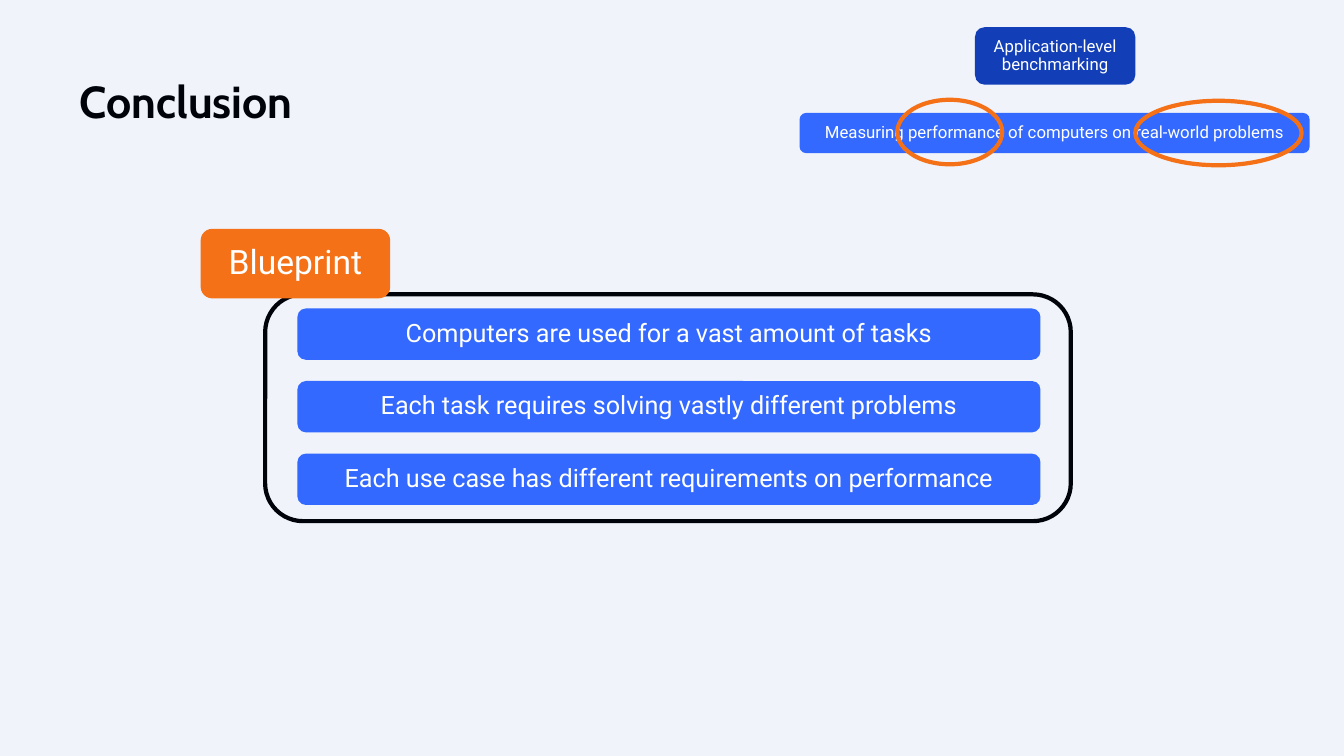
from dataclasses import dataclass

import pptx
import pptx.dml.color
import pptx.enum.shapes
import pptx.enum.text
import pptx.util

PX = pptx.util.Inches(1) // 100  # 100 px to the inch
ALIGN = pptx.enum.text.PP_ALIGN
ANCHOR = pptx.enum.text.MSO_ANCHOR
SHAPE = pptx.enum.shapes.MSO_SHAPE


@dataclass(frozen=True)
class Theme:
    background: str = "F0F3FA"
    ink: str = "00030A"
    navy: str = "123EB7"
    blue: str = "3369FF"
    orange: str = "F57118"
    white: str = "FFFFFF"
    heading_font: str = "Cabin"
    body_font: str = "Roboto"
    title_size: int = 32
    tag_size: int = 24
    point_size: int = 18
    small_size: int = 12
    outline: int = 3
    line_spacing: float = 0.9
    inset: int = 15


@dataclass(frozen=True)
class Area:
    left: int
    top: int
    width: int
    height: int

    def emu(self) -> tuple[int, int, int, int]:
        return self.left * PX, self.top * PX, self.width * PX, self.height * PX


@dataclass(frozen=True)
class Label:
    area: Area
    text: str
    fill: str
    size: int


@dataclass(frozen=True)
class Outline:
    kind: SHAPE
    area: Area
    color: str


THEME = Theme()

DEFINITION = [
    Label(Area(967, 27, 159, 57), "Application-level benchmarking", THEME.navy, THEME.small_size),
    Label(Area(793, 112, 506, 40), "Measuring performance of computers on real-world problems",
          THEME.blue, THEME.small_size),
]
HIGHLIGHTS = [
    Outline(SHAPE.OVAL, Area(890, 99, 104, 64), THEME.orange),
    Outline(SHAPE.OVAL, Area(1126, 100, 165, 64), THEME.orange),
]
POINTS = [
    "Computers are used for a vast amount of tasks",
    "Each task requires solving vastly different problems",
    "Each use case has different requirements on performance",
]
POINT_TOP, POINT_PITCH = 306, 72
FRAME = Outline(SHAPE.ROUNDED_RECTANGLE, Area(263, 292, 799, 225), THEME.ink)
TAG = Label(Area(199, 227, 188, 69), "Blueprint", THEME.orange, THEME.tag_size)


def rgb(color: str) -> pptx.dml.color.RGBColor:
    return pptx.dml.color.RGBColor.from_string(color)


def write(box, text: str, font: str, size: int, color: str, align: ALIGN,
          anchor: ANCHOR, inset: int, bold: bool = False) -> None:
    frame = box.text_frame
    frame.text = text
    frame.word_wrap = True
    frame.auto_size = pptx.enum.text.MSO_AUTO_SIZE.NONE
    frame.vertical_anchor = anchor
    frame.margin_left = frame.margin_right = inset * PX
    frame.margin_top = frame.margin_bottom = inset * PX
    para = frame.paragraphs[0]
    para.alignment = align
    para.line_spacing = THEME.line_spacing
    para.font.name = font
    para.font.size = pptx.util.Pt(size)
    para.font.bold = bold
    para.font.color.rgb = rgb(color)


def add_title(page, text: str, area: Area) -> None:
    title = page.shapes.title
    title.left, title.top, title.width, title.height = area.emu()
    write(title, text, THEME.heading_font, THEME.title_size, THEME.ink,
          ALIGN.LEFT, ANCHOR.TOP, inset=0, bold=True)


def add_label(page, label: Label) -> None:
    box = page.shapes.add_shape(SHAPE.ROUNDED_RECTANGLE, *label.area.emu())
    box.shadow.inherit = False
    box.fill.solid()
    box.fill.fore_color.rgb = rgb(label.fill)
    box.line.fill.background()
    write(box, label.text, THEME.body_font, label.size, THEME.white,
          ALIGN.CENTER, ANCHOR.MIDDLE, THEME.inset)


def add_outline(page, outline: Outline) -> None:
    box = page.shapes.add_shape(outline.kind, *outline.area.emu())
    box.shadow.inherit = False
    box.fill.background()
    box.line.color.rgb = rgb(outline.color)
    box.line.width = pptx.util.Pt(THEME.outline)


def main() -> None:
    deck = pptx.Presentation()
    deck.slide_width, deck.slide_height = 1333 * PX, 750 * PX
    page = deck.slides.add_slide(deck.slide_layouts.get_by_name("Title Only"))
    page.background.fill.solid()
    page.background.fill.fore_color.rgb = rgb(THEME.background)
    add_title(page, "Conclusion", Area(79, 79, 1176, 40))

    # Definition with its key words circled
    for label in DEFINITION:
        add_label(page, label)
    for highlight in HIGHLIGHTS:
        add_outline(page, highlight)

    # Blueprint: framed points under a tag
    for row, text in enumerate(POINTS):
        area = Area(295, POINT_TOP + row * POINT_PITCH, 737, 51)
        add_label(page, Label(area, text, THEME.blue, THEME.point_size))
    add_outline(page, FRAME)
    add_label(page, TAG)

    deck.save("out.pptx")


if __name__ == "__main__":
    main()
